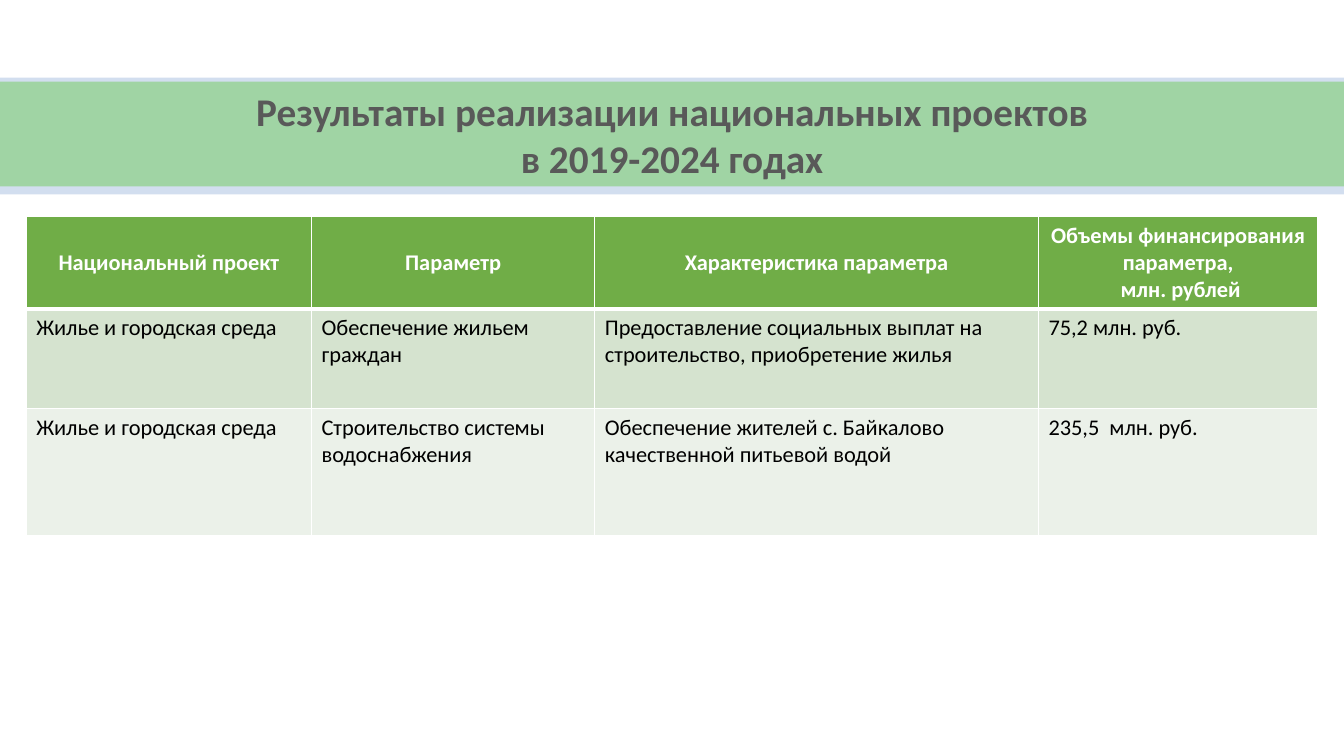
from lxml import etree
from pptx import Presentation
from pptx.dml.color import RGBColor
from pptx.enum import shapes, text
from pptx.oxml import ns
from pptx.util import Inches, Pt

FONT = "Calibri"
COLORS = {
    "strip": "D2DEEF",
    "title_fill": "A0D4A4",
    "title_text": "595959",
    "header": "70AD47",
    "odd_row": "D5E3CF",
    "even_row": "EBF1E9",
    "white": "FFFFFF",
    "black": "000000",
}
TITLE_LINES = ["Результаты реализации национальных проектов", "в 2019-2024 годах"]
COLUMN_WIDTHS = [2.83, 2.81, 4.4, 2.77]
ROW_HEIGHTS = [0.89, 0.99, 1.26]
ROWS = [
    ["Национальный проект", "Параметр", "Характеристика параметра",
     "Объемы финансирования параметра,\n млн. рублей"],
    ["Жилье и городская среда", "Обеспечение жильем граждан",
     "Предоставление социальных выплат на строительство, приобретение жилья",
     "75,2 млн. руб."],
    ["Жилье и городская среда", "Строительство системы водоснабжения",
     "Обеспечение жителей с. Байкалово качественной питьевой водой",
     "235,5  млн. руб."],
]


def color(name):
    return RGBColor.from_string(COLORS[name])


def fill_solid(target, name):
    target.fill.solid()
    target.fill.fore_color.rgb = color(name)


def format_paragraph(paragraph, size, color_name, bold, alignment):
    paragraph.alignment = alignment
    font = paragraph.font
    font.name, font.size, font.bold = FONT, Pt(size), bold
    font.color.rgb = color(color_name)


def add_title(slide):
    """Fill the title placeholder and lay a wider strip behind it."""
    title = slide.shapes.title
    title.left, title.top = Inches(0), Inches(0.81)
    title.width, title.height = Inches(13.33), Inches(1.04)
    fill_solid(title, "title_fill")
    frame = title.text_frame
    frame.auto_size = text.MSO_AUTO_SIZE.NONE
    frame.vertical_anchor = text.MSO_ANCHOR.MIDDLE
    paragraph = frame.paragraphs[0]
    paragraph.add_run().text = TITLE_LINES[0]
    paragraph.add_line_break()
    paragraph.add_run().text = TITLE_LINES[1]
    format_paragraph(paragraph, 28, "title_text", True, text.PP_ALIGN.CENTER)

    strip = slide.shapes.add_shape(
        shapes.MSO_SHAPE.RECTANGLE, Inches(0), Inches(0.77), Inches(13.33), Inches(1.16))
    strip.shadow.inherit = False
    fill_solid(strip, "strip")
    strip.line.fill.background()
    title.element.addprevious(strip.element)


def set_borders(cell, top, bottom):
    """Draw white borders; top and bottom widths are in points."""
    properties = cell._tc.get_or_add_tcPr()
    widths = {"lnL": 1, "lnR": 1, "lnT": top, "lnB": bottom}
    for position, (side, width) in enumerate(widths.items()):
        line = etree.Element(ns.qn(f"a:{side}"), w=str(Pt(width)))
        fill = etree.SubElement(line, ns.qn("a:solidFill"))
        etree.SubElement(fill, ns.qn("a:srgbClr"), val=COLORS["white"])
        properties.insert(position, line)


def format_cell(cell, row):
    is_header = row == 0
    fill_solid(cell, ["header", "odd_row", "even_row"][row])
    set_borders(cell, top=3 if row == 1 else 1, bottom=3 if is_header else 1)
    cell.vertical_anchor = text.MSO_ANCHOR.MIDDLE if is_header else text.MSO_ANCHOR.TOP
    alignment = text.PP_ALIGN.CENTER if is_header else text.PP_ALIGN.LEFT
    for paragraph in cell.text_frame.paragraphs:
        format_paragraph(paragraph, 16, "white" if is_header else "black",
                         is_header, alignment)


def add_projects_table(slide):
    table = slide.shapes.add_table(
        len(ROWS), len(COLUMN_WIDTHS), Inches(0.26), Inches(2.15),
        Inches(sum(COLUMN_WIDTHS)), Inches(sum(ROW_HEIGHTS))).table
    for column, width in zip(table.columns, COLUMN_WIDTHS):
        column.width = Inches(width)
    for row, (values, height) in enumerate(zip(ROWS, ROW_HEIGHTS)):
        table.rows[row].height = Inches(height)
        for column, value in enumerate(values):
            cell = table.cell(row, column)
            cell.text = value
            format_cell(cell, row)


def main():
    presentation = Presentation()
    presentation.slide_width = Inches(13.33)
    presentation.slide_height = Inches(7.5)
    slide = presentation.slides.add_slide(presentation.slide_layouts.get_by_name("Title Only"))
    add_title(slide)
    add_projects_table(slide)
    presentation.save("out.pptx")


if __name__ == "__main__":
    main()
